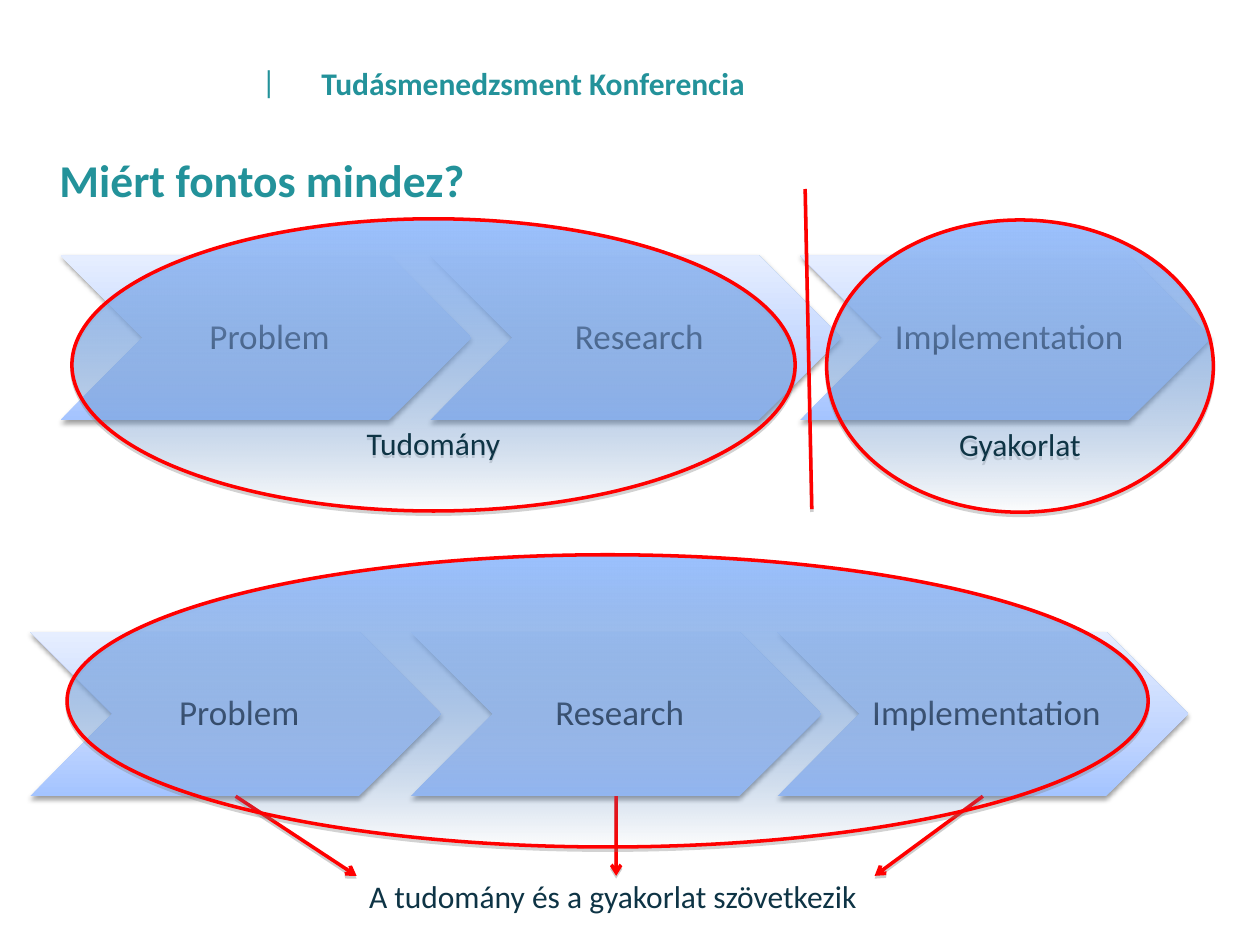
from pptx import Presentation
from pptx.dml.color import RGBColor
from pptx.enum import shapes, text
from pptx.oxml import parse_xml
from pptx.oxml.ns import nsdecls, qn
from pptx.util import Pt

TEAL = RGBColor(0x23, 0x92, 0x9A)
INK = RGBColor(0x0E, 0x34, 0x45)
BLACK = RGBColor(0, 0, 0)
RED = RGBColor(0xFF, 0, 0)
GREY = RGBColor(0x80, 0x80, 0x80)

# Gradient stops: position %, colour, opacity %
CHEVRON_STOPS = [(0, RGBColor(0xA4, 0xC4, 0xFF), 100),
                 (35, RGBColor(0xBF, 0xD4, 0xFF), 100),
                 (100, RGBColor(0xE6, 0xEE, 0xFF), 100)]
OVAL_STOPS = [(0, RGBColor(0x9B, 0xC1, 0xFF), 100),
              (100, RGBColor(0x3F, 0x80, 0xCD), 0)]

FONT = "Calibri"
STEPS = ["Problem", "Research", "Implementation"]
CHEVRON_W, CHEVRON_H = 234.7, 94


def points(*values):
    return [Pt(v) for v in values]


def set_gradient(sp, stops, angle):
    """Fill with a linear gradient; angle is clockwise in degrees."""
    sp.fill.gradient()
    gs = "".join(
        f'<a:gs pos="{pos * 1000}"><a:srgbClr val="{color}">'
        f'<a:alpha val="{alpha * 1000}"/></a:srgbClr></a:gs>'
        for pos, color, alpha in stops)
    grad = parse_xml(
        f'<a:gradFill {nsdecls("a")} rotWithShape="1"><a:gsLst>{gs}</a:gsLst>'
        f'<a:lin ang="{angle * 60000}" scaled="0"/></a:gradFill>')
    props = sp.element.spPr
    props.replace(props.find(qn("a:gradFill")), grad)


def set_shadow(sp, color, alpha, blur, dist):
    """Cast a shadow straight down; call after fill and line are set."""
    sp.element.spPr.append(parse_xml(
        f'<a:effectLst {nsdecls("a")}><a:outerShdw blurRad="{Pt(blur)}" '
        f'dist="{Pt(dist)}" dir="5400000" rotWithShape="0">'
        f'<a:srgbClr val="{color}"><a:alpha val="{alpha * 1000}"/></a:srgbClr>'
        f'</a:outerShdw></a:effectLst>'))


def write(sp, words, size, color, bold=False, align=text.PP_ALIGN.LEFT,
          anchor=text.MSO_ANCHOR.TOP, wrap=True):
    tf = sp.text_frame
    tf.word_wrap = wrap
    tf.vertical_anchor = anchor
    p = tf.paragraphs[0]
    p.alignment = align
    r = p.add_run()
    r.text = words
    r.font.name, r.font.size = FONT, Pt(size)
    r.font.bold, r.font.color.rgb = bold, color
    return p


def add_header(slide, x, y, w, h):
    bar = slide.shapes.add_textbox(*points(x, y + 3, 31.7, 29))
    write(bar, "|", 18, TEAL)
    name = slide.shapes.add_textbox(*points(x + 34, y, w - 34, h))
    write(name, "Tudásmenedzsment Konferencia", 18, TEAL, bold=True,
          anchor=text.MSO_ANCHOR.MIDDLE)


def add_title(slide, x, y, w, h):
    title = slide.shapes.title
    title.left, title.top, title.width, title.height = points(x, y, w, h)
    write(title, "Miért fontos mindez?", 26, TEAL, bold=True)


def add_chevron(slide, label, x, y):
    """Add a chevron with its label box, and return the label box."""
    sp = slide.shapes.add_shape(shapes.MSO_SHAPE.CHEVRON,
                                *points(x, y, CHEVRON_W, CHEVRON_H))
    set_gradient(sp, CHEVRON_STOPS, 270)
    sp.line.fill.background()
    set_shadow(sp, BLACK, 38, 3.1, 1.6)

    box = slide.shapes.add_textbox(
        *points(x + CHEVRON_H / 2, y, CHEVRON_W - CHEVRON_H, CHEVRON_H))
    p = write(box, label, 20, BLACK, align=text.PP_ALIGN.CENTER,
              anchor=text.MSO_ANCHOR.MIDDLE)
    p.line_spacing, p.space_after = 0.9, Pt(7)
    tf = box.text_frame
    tf.margin_left = Pt(6.3)
    tf.margin_top = tf.margin_right = tf.margin_bottom = Pt(2.1)
    return box


def add_oval(slide, x, y, w, h, label=None):
    sp = slide.shapes.add_shape(shapes.MSO_SHAPE.OVAL, *points(x, y, w, h))
    set_gradient(sp, OVAL_STOPS, 90)
    sp.line.color.rgb, sp.line.width = RED, Pt(2)
    set_shadow(sp, GREY, 35, 0, 1.8)
    if label:
        write(sp, label, 18, INK, align=text.PP_ALIGN.CENTER,
              anchor=text.MSO_ANCHOR.BOTTOM)


def add_red_line(slide, x1, y1, x2, y2, arrow=False):
    line = slide.shapes.add_connector(shapes.MSO_CONNECTOR.STRAIGHT,
                                      *points(x1, y1, x2, y2))
    line.line.color.rgb, line.line.width = RED, Pt(2)
    if arrow:
        line.line._get_or_add_ln().append(
            parse_xml(f'<a:tailEnd {nsdecls("a")} type="arrow"/>'))
    set_shadow(line, GREY, 38, 0, 1.6)
    return line


def add_separate_worlds(slide, x, y):
    """Science and practice in two ovals, split by a line."""
    for i, label in enumerate(STEPS):
        add_chevron(slide, label, x + 211.3 * i, y + 21)
    add_oval(slide, x + 6.5, y, 413.3, 167, "Tudomány")
    add_red_line(slide, x + 425.5, y - 17, x + 429.3, y + 166)
    add_oval(slide, x + 437.8, y + 0.7, 221, 167, "Gyakorlat")


def add_shared_world(slide, x, y):
    """All steps in one oval, with arrows to the conclusion."""
    boxes = [add_chevron(slide, label, x + dx, y + 44)
             for label, dx in zip(STEPS, (0, 217.4, 427))]
    caption = slide.shapes.add_textbox(*points(x + 186.5, y + 180.7, 296, 29))
    write(caption, "A tudomány és a gyakorlat szövetkezik", 18, INK, wrap=False)
    for box, dx in zip(boxes, (186.5, 334.8, 482.5)):
        arrow = add_red_line(slide, x, y, x + dx, y + 183.5, arrow=True)
        arrow.begin_connect(box, 2)
    add_oval(slide, x + 21, y, 617.8, 167)


def main():
    prs = Presentation()
    prs.slide_width, prs.slide_height = Pt(720), Pt(540)
    slide = prs.slides.add_slide(prs.slide_layouts[5])
    add_header(slide, 142.5, 29, 525.5, 36.5)
    add_title(slide, 26.8, 83.5, 612, 49.7)
    add_separate_worlds(slide, 34.6, 125)
    add_shared_world(slide, 17.3, 317)
    prs.save("out.pptx")


if __name__ == "__main__":
    main()
